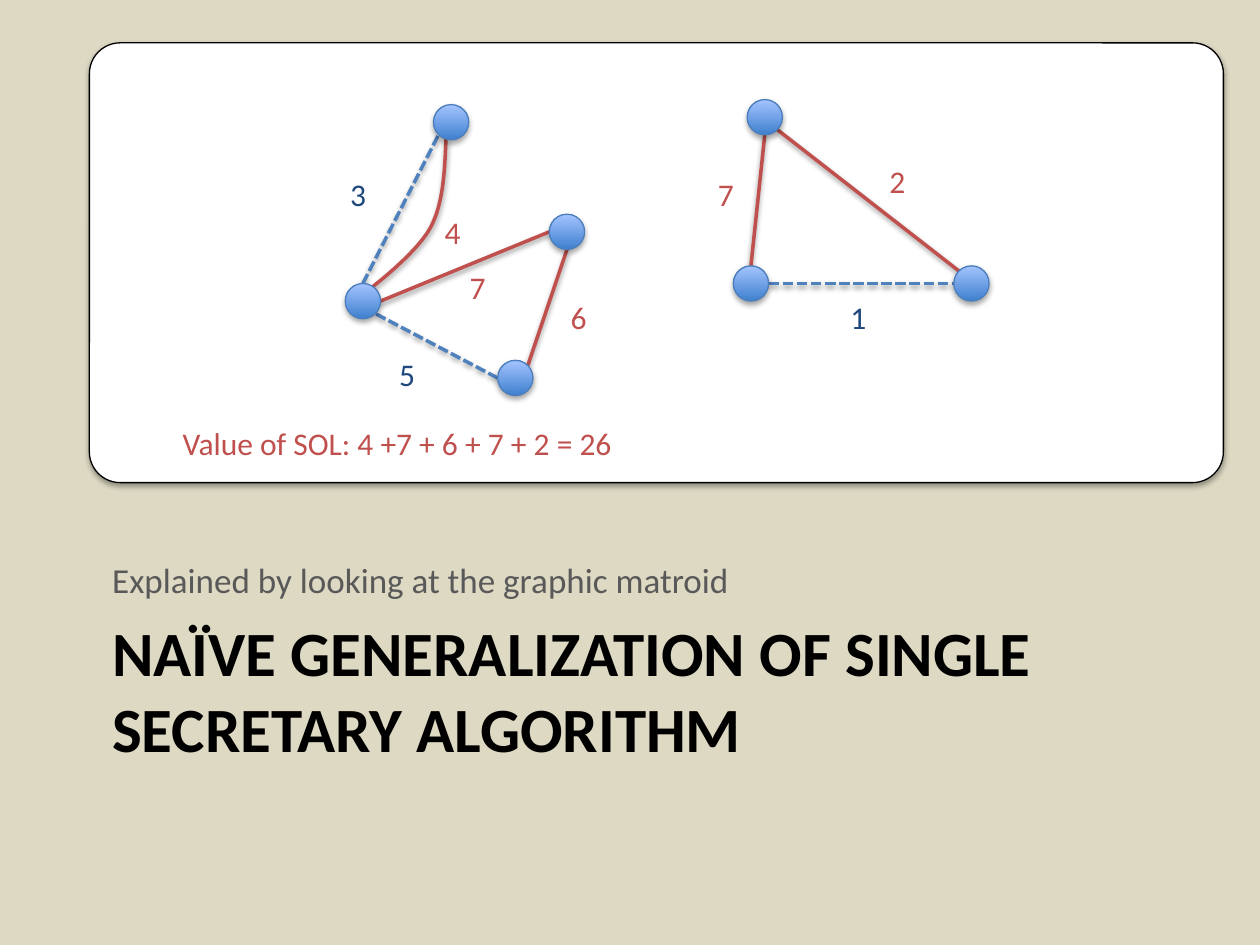
"""Build the section slide on the naïve secretary algorithm for the graphic matroid."""
from math import cos, radians, sin

from lxml.etree import SubElement
from pptx import Presentation
from pptx.dml.color import RGBColor
from pptx.enum.dml import MSO_LINE
from pptx.enum.shapes import MSO_CONNECTOR, MSO_SHAPE
from pptx.enum.text import MSO_ANCHOR
from pptx.oxml.ns import qn
from pptx.util import Inches, Pt

BLACK = RGBColor(0x00, 0x00, 0x00)
WHITE = RGBColor(0xFF, 0xFF, 0xFF)
SAND = RGBColor(0xDD, 0xD9, 0xC3)
GRAY = RGBColor(0x59, 0x59, 0x59)
RED = RGBColor(0xC0, 0x50, 0x4D)
BLUE = RGBColor(0x4F, 0x81, 0xBD)
NAVY = RGBColor(0x1F, 0x49, 0x7D)
RIM = RGBColor(0x4B, 0x7E, 0xBC)
DEEP = RGBColor(0x3F, 0x80, 0xCE)
PALE = RGBColor(0xA4, 0xC4, 0xFF)

TITLE = "NAÏVE GENERALIZATION OF SINGLE SECRETARY ALGORITHM"
SUBTITLE = "Explained by looking at the graphic matroid"
SOLUTION = "Value of SOL: 4 +7 + 6 + 7 + 2 = 26"
RADIUS = 0.14
NODES = {
    "a": (3.58, 0.97), "b": (2.88, 2.39), "c": (4.5, 1.84), "d": (4.09, 3.0),
    "e": (6.07, 0.93), "f": (5.96, 2.25), "g": (7.71, 2.25),
}
ANGLES = {"right": 0, "lower right": 45, "bottom": 90, "lower left": 135,
          "left": 180, "upper left": 225, "top": 270, "upper right": 315}
EDGES = [
    ("b", "top", "a", "lower left", False),
    ("d", "left", "b", "lower right", False),
    ("c", "bottom", "d", "upper right", True),
    ("f", "top", "e", "bottom", True),
    ("f", "right", "g", "left", False),
    ("b", "right", "c", "left", True),
    ("e", "lower right", "g", "upper left", True),
]
CURVE = [
    [(3.54, 1.1), (3.53, 1.35), (3.52, 1.61), (3.42, 1.8)],
    [(3.42, 1.8), (3.32, 2.0), (2.94, 2.29), (2.94, 2.29)],
]
WEIGHTS = [
    ("3", 2.68, 1.34, NAVY), ("5", 3.07, 2.77, NAVY), ("1", 6.65, 2.32, NAVY),
    ("6", 4.43, 2.32, RED), ("7", 5.6, 1.34, RED), ("4", 3.43, 1.64, RED),
    ("7", 3.63, 2.08, RED), ("2", 6.96, 1.24, RED),
]


def box(*lengths):
    return [Inches(v) for v in lengths]


def add_shadow(sp, alpha, dist):
    sp_pr = sp._element.spPr
    for old in sp_pr.findall(qn("a:effectLst")):
        sp_pr.remove(old)
    shadow = SubElement(SubElement(sp_pr, qn("a:effectLst")), qn("a:outerShdw"), {
        "blurRad": str(Pt(3.1)), "dist": str(Pt(dist)), "dir": "5400000", "rotWithShape": "0"})
    color = SubElement(shadow, qn("a:srgbClr"), val="000000")
    SubElement(color, qn("a:alpha"), val=str(alpha * 1000))


def set_line(sp, color, width):
    sp.line.color.rgb = color
    sp.line.width = Pt(width)


def write(tf, text, size, color, **extra):
    r = tf.paragraphs[0].add_run()
    r.text = text
    r.font.color.rgb = color
    for name, value in {"name": "Calibri", "size": Pt(size), **extra}.items():
        setattr(r.font, name, value)


def add_label(s, text, x, y, width, color):
    tf = s.shapes.add_textbox(*box(x, y, width, 0.4)).text_frame
    tf.word_wrap = False
    write(tf, text, 18, color)


def fill_placeholder(sp, place, anchor, *text, **extra):
    sp.left, sp.top, sp.width, sp.height = box(*place)
    sp.text_frame.vertical_anchor = anchor
    write(sp.text_frame, *text, **extra)


def rim_point(node, site):
    x, y = NODES[node]
    angle = radians(ANGLES[site])
    return box(x + RADIUS * cos(angle), y + RADIUS * sin(angle))


def add_edge(s, start, start_site, end, end_site, chosen):
    line = s.shapes.add_connector(
        MSO_CONNECTOR.STRAIGHT, *rim_point(start, start_site), *rim_point(end, end_site))
    set_line(line, RED if chosen else BLUE, 2)
    if not chosen:
        line.line.dash_style = MSO_LINE.SQUARE_DOT
    add_shadow(line, 38, 1.6)


def bezier(points, t):
    shares = ((1 - t) ** 3, 3 * t * (1 - t) ** 2, 3 * t * t * (1 - t), t ** 3)
    return box(*(sum(k * p[axis] for k, p in zip(shares, points)) for axis in (0, 1)))


def add_curve(s, steps=12):
    points = [bezier(part, i / steps) for part in CURVE for i in range(1, steps + 1)]
    outline = s.shapes.build_freeform(*box(*CURVE[0][0]))
    outline.add_line_segments(points, close=False)
    curve = outline.convert_to_shape()
    curve.fill.background()
    set_line(curve, RED, 2)
    add_shadow(curve, 38, 1.6)


def add_node(s, x, y):
    node = s.shapes.add_shape(
        MSO_SHAPE.OVAL, *box(x - RADIUS, y - RADIUS, 2 * RADIUS, 2 * RADIUS))
    node.fill.gradient()
    node.fill.gradient_angle = 90
    for stop, color in zip(node.fill.gradient_stops, (DEEP, PALE)):
        stop.color.rgb = color
    set_line(node, RIM, 0.75)
    add_shadow(node, 35, 1.8)


def add_panel(s):
    panel = s.shapes.add_shape(MSO_SHAPE.ROUNDED_RECTANGLE, *box(0.71, 0.34, 9, 3.49))
    panel.adjustments[0] = 0.07
    panel.fill.solid()
    panel.fill.fore_color.rgb = WHITE
    set_line(panel, BLACK, 0.75)
    add_shadow(panel, 35, 1.8)


def main():
    prs = Presentation()
    prs.slide_width, prs.slide_height = box(10, 7.5)
    s = prs.slides.add_slide(prs.slide_layouts[2])
    s.background.fill.solid()
    s.background.fill.fore_color.rgb = SAND
    fill_placeholder(s.shapes.title, (0.79, 4.82, 8.67, 1.49), MSO_ANCHOR.TOP,
                     TITLE, 36, BLACK, bold=True)
    fill_placeholder(s.placeholders[1], (0.79, 3.18, 8.5, 1.64), MSO_ANCHOR.BOTTOM,
                     SUBTITLE, 20, GRAY)
    add_panel(s)
    for edge in EDGES:
        add_edge(s, *edge)
    add_curve(s)
    for center in NODES.values():
        add_node(s, *center)
    for text, x, y, color in WEIGHTS:
        add_label(s, text, x, y, 0.33, color)
    add_label(s, SOLUTION, 1.35, 3.32, 3.89, RED)
    prs.save("out.pptx")


if __name__ == "__main__":
    main()
